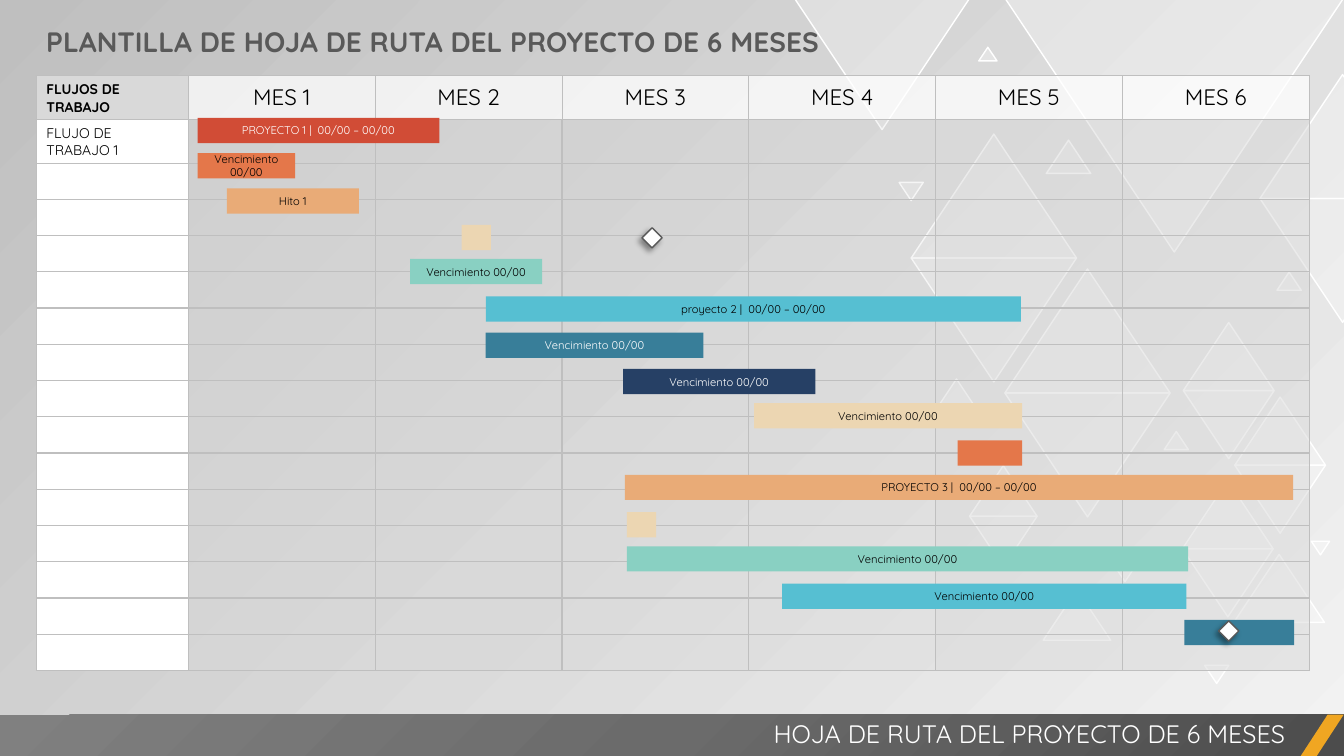
from lxml import etree
from pptx import Presentation
from pptx import util as u
from pptx.dml.color import RGBColor
from pptx.enum import shapes, text
from pptx.oxml import parse_xml
from pptx.oxml.ns import nsdecls, qn

Pt = u.Pt
FONT = "Quicksand"
WHITE = RGBColor(0xFF, 0xFF, 0xFF)
BLACK = RGBColor(0, 0, 0)
PALE = RGBColor(0xF2, 0xF2, 0xF2)
SILVER = RGBColor(0xBF, 0xBF, 0xBF)
LIGHT = RGBColor(0xD9, 0xD9, 0xD9)
DARK = RGBColor(0x59, 0x59, 0x59)
GOLD = RGBColor(0xF0, 0xA6, 0x22)
RED = RGBColor(0xD1, 0x4C, 0x36)
ORANGE = RGBColor(0xE4, 0x77, 0x4A)
PEACH = RGBColor(0xE9, 0xAB, 0x77)
SAND = RGBColor(0xEC, 0xD6, 0xB2)
MINT = RGBColor(0x89, 0xD0, 0xC2)
SKY = RGBColor(0x56, 0xBF, 0xD2)
TEAL = RGBColor(0x38, 0x7E, 0x99)
NAVY = RGBColor(0x26, 0x40, 0x65)

# Content
TITLE = "PLANTILLA DE HOJA DE RUTA DEL PROYECTO DE 6 MESES"
FOOTER = "HOJA DE RUTA DEL PROYECTO DE 6 MESES"
HEADINGS = ["FLUJOS DE TRABAJO"] + [f"MES {month}" for month in range(1, 7)]
WORKSTREAMS = ["FLUJO DE TRABAJO 1"] + [""] * 14
MONTH_OPACITY = [50, 50, 25, 25, 50, 50]
DUE = "Vencimiento 00/00"
BARS = [  # left, top, width, fill, label, label colour
    (141.1, 84.2, 172.8, RED, "PROYECTO 1 |  00/00 – 00/00", WHITE),
    (141.1, 109.4, 69.8, ORANGE, DUE, BLACK),
    (162, 134.6, 94.3, PEACH, "Hito 1", BLACK),
    (329.8, 160.6, 20.9, SAND, "", BLACK),
    (293, 185, 94.3, MINT, DUE, BLACK),
    (347, 211.7, 382.3, SKY, "proyecto 2 |  00/00 – 00/00", BLACK),
    (347, 237.6, 155.5, TEAL, DUE, WHITE),
    (445, 263.5, 137.5, NAVY, DUE, WHITE),
    (538.6, 288, 191.5, SAND, DUE, BLACK),
    (684, 314.6, 46.1, ORANGE, "", BLACK),
    (446.4, 339.1, 477.4, PEACH, "PROYECTO 3 |  00/00 – 00/00", BLACK),
    (447.8, 365.8, 20.9, SAND, "", BLACK),
    (447.8, 390.2, 401, MINT, DUE, BLACK),
    (558.7, 416.9, 288.7, SKY, DUE, BLACK),
    (846, 442.8, 78.5, TEAL, "", BLACK),
]
MILESTONES = [(458.6, 162.7), (870.5, 443.5)]
UP, DOWN, BOTH = (0,), (180,), (0, 180)
TRIANGLES = [  # left, top, width, rotations stacked downwards
    (650.9, 95.8, 118, BOTH), (717.8, 192.2, 118, BOTH),
    (717.8, -1.4, 241.9, DOWN), (881.3, 396, 64.8, UP),
    (844.6, 343.4, 64.8, BOTH), (845.3, 230.4, 64.8, BOTH),
    (882, 283.7, 64.8, BOTH), (745.2, 421.2, 48.2, UP),
    (692.6, 332.6, 48.2, BOTH), (900, 53.3, 118, BOTH),
    (787.7, 391.7, 31.7, DOWN), (667.4, 270.7, 31.7, UP),
    (831.6, 308.2, 17.3, UP), (860.4, 475.2, 17.3, DOWN),
    (642.2, 130.3, 17.3, DOWN), (912.2, 194.4, 17.3, UP),
    (699.1, 33.8, 13, UP), (936.7, 386.6, 13, DOWN),
    (747.4, 100.1, 31.7, UP), (567.4, -1.4, 125.3, DOWN),
]


def set_opacity(element, percent):
    colour = next(element.iter(qn("a:srgbClr")))
    etree.SubElement(colour, qn("a:alpha"), val=str(percent * 1000))


def add_figure(parent, kind, left, top, width, height, fill, line=None):
    figure = parent.shapes.add_shape(kind, Pt(left), Pt(top), Pt(width), Pt(height))
    figure.shadow.inherit = False
    figure.fill.solid()
    figure.fill.fore_color.rgb = fill
    if line is None:
        figure.line.fill.background()
    else:
        figure.line.color.rgb = line
        figure.line.width = Pt(1)
    return figure


def write(frame, words, size, colour, align, bold=False):
    paragraph = frame.paragraphs[0]
    paragraph.alignment = align
    if not words:
        etree.SubElement(paragraph._p, qn("a:endParaRPr"), sz=str(size * 100))
        return
    run = paragraph.add_run()
    run.text = words
    run.font.name, run.font.size, run.font.bold = FONT, Pt(size), bold
    run.font.color.rgb = colour


def add_label(slide, box, words, size, colour, align, bold=False):
    frame = slide.shapes.add_textbox(*map(Pt, box)).text_frame
    frame.word_wrap = True
    frame.auto_size = text.MSO_AUTO_SIZE.SHAPE_TO_FIT_TEXT
    write(frame, words, size, colour, align, bold)


def style_cell(cell, fill, opacity, edge):
    cell.vertical_anchor = text.MSO_ANCHOR.MIDDLE
    cell.fill.solid()
    cell.fill.fore_color.rgb = fill
    properties = cell._tc.get_or_add_tcPr()
    if opacity < 100:
        set_opacity(properties, opacity)
    for place, side in enumerate("LRTB"):
        width = Pt(1 if side == "B" else edge)
        properties.insert(place, parse_xml(
            f'<a:ln{side} {nsdecls("a")} w="{width}"><a:solidFill>'
            f'<a:srgbClr val="{SILVER}"/></a:solidFill></a:ln{side}>'))


def add_background(slide):
    fill = slide.background.fill
    fill.gradient()
    fill.gradient_angle = 135
    for stop, colour, position in zip(fill.gradient_stops, (PALE, SILVER), (0, 1)):
        stop.color.rgb = colour
        stop.position = position
    set_opacity(slide.element, 40)
    group = slide.shapes.add_group_shape()
    for left, top, width, rotations in TRIANGLES:
        height = width * 0.75
        for level, rotation in enumerate(rotations):
            triangle = add_figure(group, shapes.MSO_SHAPE.ISOSCELES_TRIANGLE, left,
                                  top + level * height, width, height, WHITE, WHITE)
            triangle.rotation = rotation
            set_opacity(triangle.element.spPr, 30)


def add_footer(slide):
    band = add_figure(slide, shapes.MSO_SHAPE.RECTANGLE, 0, 510.5, 960, 30, DARK)
    stops = "".join(f'<a:gs pos="{pos}"><a:srgbClr val="{colour}"/></a:gs>' for pos, colour
                    in ((0, "4C4C4C"), (50000, "6B6B6B"), (100000, "808080")))
    solid = band.element.spPr.find(qn("a:solidFill"))
    solid.getparent().replace(solid, parse_xml(
        f'<a:gradFill {nsdecls("a")}><a:gsLst>{stops}</a:gsLst><a:path path="circle">'
        '<a:fillToRect l="100000" t="100000"/></a:path></a:gradFill>'))
    accent = add_figure(slide, shapes.MSO_SHAPE.PARALLELOGRAM, 928.8, 510.5, 31, 30, GOLD)
    accent.adjustments[0] = 0.652
    add_label(slide, (378, 509.8, 547.2, 28.8), FOOTER, 18, WHITE, text.PP_ALIGN.RIGHT)


def add_calendar(slide):
    table = slide.shapes.add_table(len(WORKSTREAMS) + 1, len(HEADINGS), Pt(25.9), Pt(54),
                                   Pt(909.4), Pt(410.4)).table
    table.first_row = table.horz_banding = False
    for index, column in enumerate(table.columns):
        column.width = Pt(133.45 if index else 108.7)
    for index, row in enumerate(table.rows):
        row.height = Pt(25.9 if index else 26.6)
    for index, heading in enumerate(HEADINGS):
        cell = table.cell(0, index)
        style_cell(cell, WHITE if index else LIGHT, 75 if index else 100, 0.5)
        write(cell.text_frame, heading, 16 if index else 10, BLACK,
              text.PP_ALIGN.CENTER if index else text.PP_ALIGN.LEFT, not index)
    for row, workstream in enumerate(WORKSTREAMS, 1):
        cells = [(workstream, WHITE, 100)] + [("", LIGHT, value) for value in MONTH_OPACITY]
        for column, (words, fill, opacity) in enumerate(cells):
            cell = table.cell(row, column)
            style_cell(cell, fill, opacity, 1)
            write(cell.text_frame, words, 10, BLACK, text.PP_ALIGN.LEFT)


def add_schedule(slide):
    for left, top, width, fill, label, colour in BARS:
        bar = add_figure(slide, shapes.MSO_SHAPE.RECTANGLE, left, top, width, 18, fill)
        if label:
            bar.text_frame.vertical_anchor = text.MSO_ANCHOR.MIDDLE
            write(bar.text_frame, label, 8, colour, text.PP_ALIGN.CENTER)
    for left, top in MILESTONES:
        milestone = add_figure(slide, shapes.MSO_SHAPE.DIAMOND, left, top, 14.4, 14.4, WHITE, DARK)
        milestone.element.spPr.find(qn("a:effectLst")).append(parse_xml(
            f'<a:outerShdw {nsdecls("a")} blurRad="{Pt(4)}" dist="{Pt(3)}" dir="8100000">'
            '<a:srgbClr val="000000"><a:alpha val="40000"/></a:srgbClr></a:outerShdw>'))


def main():
    deck = Presentation()
    deck.slide_width, deck.slide_height = Pt(960), Pt(540)
    slide = deck.slides.add_slide(deck.slide_layouts[6])
    add_background(slide)
    add_footer(slide)
    add_calendar(slide)
    add_schedule(slide)
    add_label(slide, (25.9, 13.7, 575.3, 31.7), TITLE, 20, DARK, text.PP_ALIGN.LEFT, True)
    deck.save("out.pptx")


if __name__ == "__main__":
    main()
